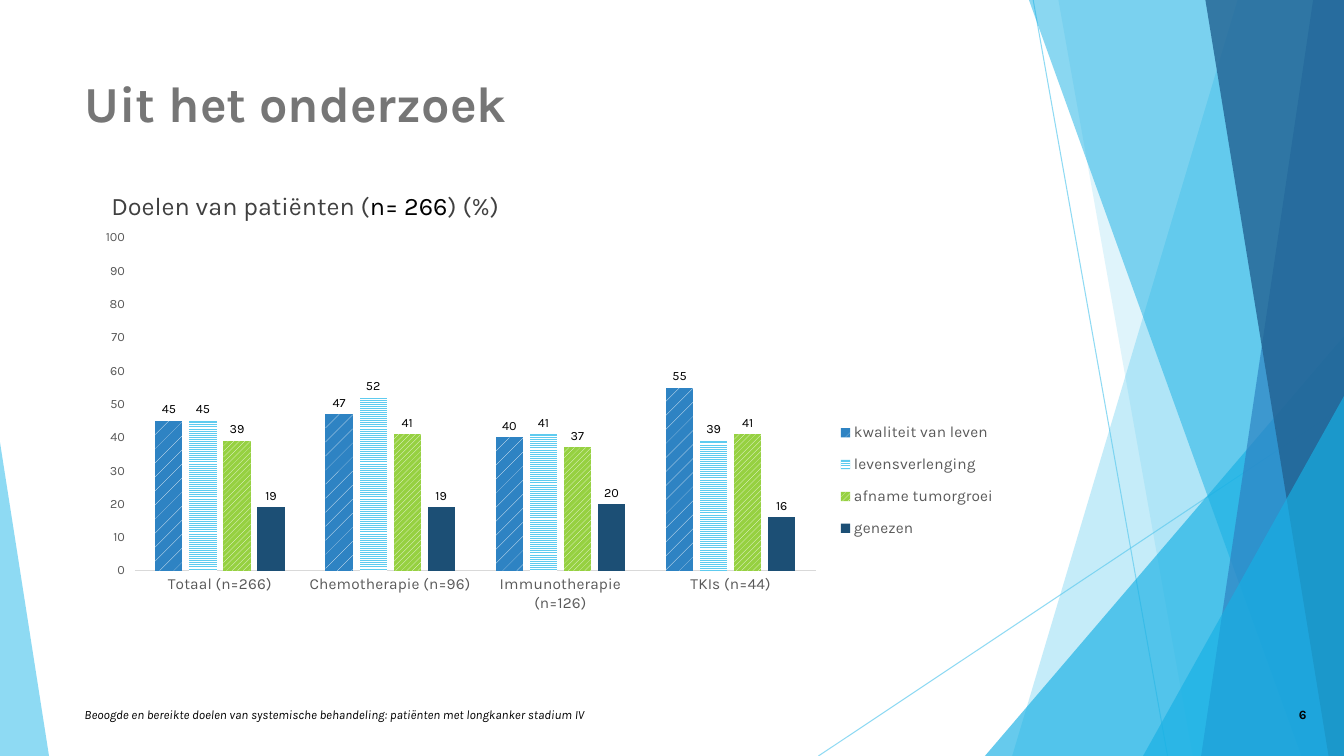
"""Build a slide with a clustered column chart of patients' treatment goals."""
from dataclasses import dataclass

from lxml import etree
from pptx import Presentation
from pptx.chart.data import CategoryChartData
from pptx.dml.color import RGBColor
from pptx.enum.chart import XL_CHART_TYPE, XL_LABEL_POSITION, XL_LEGEND_POSITION, XL_TICK_MARK
from pptx.enum.dml import MSO_PATTERN
from pptx.enum.shapes import MSO_CONNECTOR, MSO_SHAPE
from pptx.enum.text import MSO_ANCHOR, MSO_AUTO_SIZE, PP_ALIGN
from pptx.oxml.ns import qn
from pptx.util import Pt

COLUMNS = XL_CHART_TYPE.COLUMN_CLUSTERED
LABEL_ABOVE = XL_LABEL_POSITION.OUTSIDE_END
LEGEND_RIGHT = XL_LEGEND_POSITION.RIGHT
TICK_NONE = XL_TICK_MARK.NONE
TICK_OUTSIDE = XL_TICK_MARK.OUTSIDE
DOTS = MSO_PATTERN.PERCENT_5
STRIPES = MSO_PATTERN.LIGHT_HORIZONTAL
DIAGONALS = MSO_PATTERN.WIDE_UPWARD_DIAGONAL
STRAIGHT = MSO_CONNECTOR.STRAIGHT
TRIANGLE = MSO_SHAPE.ISOSCELES_TRIANGLE
TOP, MIDDLE = MSO_ANCHOR.TOP, MSO_ANCHOR.MIDDLE
LEFT, RIGHT = PP_ALIGN.LEFT, PP_ALIGN.RIGHT
FIXED_SIZE = MSO_AUTO_SIZE.NONE

WIDTH, HEIGHT = 960, 540


@dataclass(frozen=True)
class Theme:
    """Hold the font, colours and type sizes."""
    font: str = "Karla"
    black: str = "000000"
    white: str = "FFFFFF"
    title: str = "767676"
    body: str = "404040"
    axis: str = "595959"
    axis_line: str = "D9D9D9"
    sky: str = "5FCBEF"
    cyan: str = "17B0E4"
    blue: str = "2E83C3"
    steel: str = "226292"
    navy: str = "1C4F75"
    green: str = "96D141"
    title_size: float = 36
    body_size: float = 18
    chart_size: float = 11
    small_size: float = 9


THEME = Theme()

CATEGORIES = ["Totaal (n=266)", "Chemotherapie (n=96)", "Immunotherapie (n=126)", "TKIs (n=44)"]
GOALS = [
    ("kwaliteit van leven", (45, 47, 40, 55), THEME.blue, DOTS),
    ("levensverlenging", (45, 52, 41, 39), THEME.sky, STRIPES),
    ("afname tumorgroei", (39, 41, 37, 41), THEME.green, DIAGONALS),
    ("genezen", (19, 19, 20, 16), THEME.navy, None),
]
RAYS = [((738, 0), (834, HEIGHT)), ((WIDTH, 290), (584.6, HEIGHT))]
LEFT_WEDGE = (0, 316, 35, 224, 0, THEME.sky, 70)
LOW_WEDGE = (703.5, 240, 256.5, 300, 1, THEME.cyan, 66)
CORNER_WEDGE = (816.5, 283, 143.5, 257, 1, THEME.cyan, 66)
BACK_BANDS = [(884, 723, THEME.sky, 36), (756, 852, THEME.sky, 20)]
FRONT_BANDS = [
    (735, 929.5, THEME.cyan, 50),
    (938, 858, THEME.blue, 70),
    (861, 949, THEME.steel, 80),
]


def style_font(font, size, color, bold=False, italic=False):
    """Set the typeface, size, colour and style of a font."""
    font.name, font.size = THEME.font, Pt(size)
    font.bold, font.italic = bold, italic
    font.color.rgb = RGBColor.from_string(color)


def set_alpha(fill_owner, percent):
    """Make the solid colour of a shape or line partly transparent."""
    color = next(fill_owner.iter(qn("a:srgbClr")))
    etree.SubElement(color, qn("a:alpha")).set("val", str(percent * 1000))


def paint(shape, color, alpha):
    """Give a shape a transparent fill without outline or shadow."""
    shape.shadow.inherit = False
    shape.fill.solid()
    shape.fill.fore_color.rgb = RGBColor.from_string(color)
    shape.line.fill.background()
    set_alpha(shape.fill._xPr, alpha)


def add_ray(slide, start, end):
    """Draw one thin background line."""
    ray = slide.shapes.add_connector(STRAIGHT, *(Pt(value) for value in start + end))
    ray.line.color.rgb = RGBColor.from_string(THEME.sky)
    ray.line.width = Pt(0.75)
    properties = ray._element.spPr
    set_alpha(properties, 70)
    etree.SubElement(properties, qn("a:effectLst"))


def add_band(slide, top_x, bottom_x, color, alpha):
    """Draw a full-height band from a slanted edge to the right of the slide."""
    builder = slide.shapes.build_freeform(Pt(top_x), Pt(0), scale=1.0)
    corners = [(WIDTH, 0), (WIDTH, HEIGHT), (bottom_x, HEIGHT)]
    builder.add_line_segments([(Pt(x), Pt(y)) for x, y in corners], close=True)
    paint(builder.convert_to_shape(), color, alpha)


def add_wedge(slide, left, top, width, height, apex, color, alpha):
    """Draw a triangle whose apex is at the given share of its width."""
    wedge = slide.shapes.add_shape(TRIANGLE, Pt(left), Pt(top), Pt(width), Pt(height))
    wedge.adjustments[0] = apex
    paint(wedge, color, alpha)


def add_background(slide):
    """Draw the decorative lines, bands and wedges."""
    for start, end in RAYS:
        add_ray(slide, start, end)
    for band in BACK_BANDS:
        add_band(slide, *band)
    add_wedge(slide, *LOW_WEDGE)
    for band in FRONT_BANDS:
        add_band(slide, *band)
    add_wedge(slide, *CORNER_WEDGE)
    add_wedge(slide, *LEFT_WEDGE)


def write_text(shape, runs, size, anchor=TOP, align=LEFT, bold=False, italic=False):
    """Write coloured runs as one paragraph and return it."""
    frame = shape.text_frame
    frame.word_wrap, frame.auto_size = True, FIXED_SIZE
    frame.vertical_anchor = anchor
    paragraph = frame.paragraphs[0]
    paragraph.alignment = align
    for text, color in runs:
        run = paragraph.add_run()
        run.text = text
        style_font(run.font, size, color, bold, italic)
    return paragraph


def place(shape, left, top, width, height):
    """Move a placeholder and bring it in front of the background."""
    shape.left, shape.top = Pt(left), Pt(top)
    shape.width, shape.height = Pt(width), Pt(height)
    shape._element.getparent().append(shape._element)
    return shape


def add_footer(slide, text, left, width, **text_format):
    """Add a small text box on the footer line."""
    box = slide.shapes.add_textbox(Pt(left), Pt(496), Pt(width), Pt(29))
    write_text(box, [(text, THEME.black)], THEME.small_size, anchor=MIDDLE, **text_format)


def set_layout(element, index, inner, **shares):
    """Fix a chart part at shares of the chart area."""
    for old in element.findall(qn("c:layout")):
        element.remove(old)
    layout = etree.Element(qn("c:layout"))
    element.insert(index, layout)
    manual = etree.SubElement(layout, qn("c:manualLayout"))
    settings = {"layoutTarget": "inner"} if inner else {}
    settings.update(xMode="edge", yMode="edge", **shares)
    for name, value in settings.items():
        etree.SubElement(manual, qn("c:" + name)).set("val", str(value))


def style_series(series, color, pattern):
    """Fill the columns of a series and label their values."""
    fill = series.format.fill
    if pattern is None:
        fill.solid()
        fill.fore_color.rgb = RGBColor.from_string(color)
    else:
        fill.patterned()
        fill.pattern = pattern
        fill.fore_color.rgb = RGBColor.from_string(THEME.white)
        fill.back_color.rgb = RGBColor.from_string(color)
    series.invert_if_negative = False
    labels = series.data_labels
    labels.show_value, labels.position = True, LABEL_ABOVE
    labels.number_format, labels.number_format_is_linked = "0", False
    style_font(labels.font, THEME.small_size, THEME.black)


def style_axes(chart):
    """Format the category and value axes."""
    category, value = chart.category_axis, chart.value_axis
    category.major_tick_mark, value.major_tick_mark = TICK_NONE, TICK_OUTSIDE
    category.format.line.color.rgb = RGBColor.from_string(THEME.axis_line)
    category.format.line.width = Pt(0.75)
    value.format.line.fill.background()
    value.has_major_gridlines = False
    value.minimum_scale, value.maximum_scale, value.major_unit = 0, 100, 10
    value.tick_labels.number_format = "0"
    value.tick_labels.number_format_is_linked = False
    style_font(category.tick_labels.font, THEME.chart_size, THEME.axis)
    style_font(value.tick_labels.font, THEME.small_size, THEME.axis)


def add_goals_chart(slide):
    """Add the chart of goals by treatment."""
    data = CategoryChartData(number_format="0")
    data.categories = CATEGORIES
    for name, values, _, _ in GOALS:
        data.add_series(name, values)
    frame = slide.shapes.add_chart(COLUMNS, Pt(63.4), Pt(158.4), Pt(657.4), Pt(286.6), data)
    chart = frame.chart
    chart.has_title = False
    style_font(chart.font, 10, THEME.black)
    plot = chart.plots[0]
    plot.gap_width, plot.overlap, plot.vary_by_categories = 150, -25, False
    for series, (_, _, color, pattern) in zip(plot.series, GOALS):
        style_series(series, color, pattern)
    style_axes(chart)
    chart.has_legend = True
    legend = chart.legend
    legend.position, legend.include_in_layout = LEGEND_RIGHT, False
    style_font(legend.font, THEME.chart_size, THEME.axis)
    set_layout(chart._chartSpace.chart.plotArea, 0, True, x=0.05, y=0.04, w=0.74, h=0.83)
    set_layout(legend._element, 1, False, x=0.81, y=0.47, w=0.18, h=0.35)


def main():
    """Build the slide and save it."""
    presentation = Presentation()
    presentation.slide_width, presentation.slide_height = Pt(WIDTH), Pt(HEIGHT)
    slide = presentation.slides.add_slide(presentation.slide_layouts[1])
    add_background(slide)
    title = place(slide.shapes.title, 53.3, 48, 677, 104)
    write_text(title, [("Uit het onderzoek", THEME.title)], THEME.title_size, bold=True)
    body = place(slide.placeholders[1], 53.3, 132, 677, 305)
    heading = [("Doelen van patiënten (", THEME.body), ("n= 266", THEME.black), (") (%)", THEME.body)]
    paragraph = write_text(body, heading, THEME.body_size)
    paragraph.level = 1
    paragraph.space_before = paragraph.space_after = Pt(6)
    properties = paragraph._p.get_or_add_pPr()
    properties.set("marL", str(Pt(19)))
    properties.set("indent", "0")
    etree.SubElement(properties, qn("a:buNone"))
    add_footer(slide, "6", 886.3, 54, align=RIGHT, bold=True)
    source = "Beoogde en bereikte doelen van systemische behandeling: patiënten met longkanker stadium IV"
    add_footer(slide, source, 53.3, 496, italic=True)
    add_goals_chart(slide)
    presentation.save("out.pptx")


if __name__ == "__main__":
    main()
